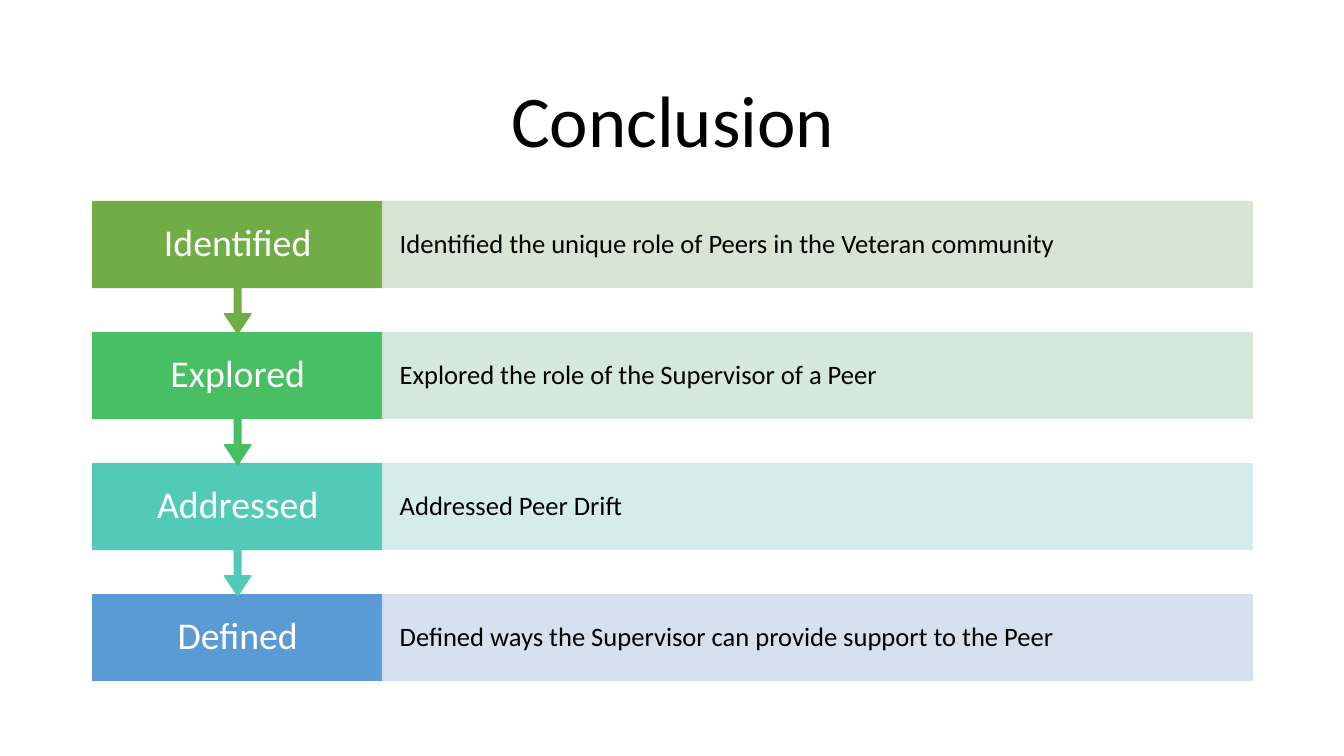
from pptx import Presentation
from pptx.dml.color import RGBColor
from pptx.enum.shapes import MSO_SHAPE
from pptx.enum.text import MSO_ANCHOR, PP_ALIGN
from pptx.oxml.ns import qn
from pptx.util import Inches, Pt

RECTANGLE = MSO_SHAPE.RECTANGLE
ARROW_BOX = MSO_SHAPE.DOWN_ARROW_CALLOUT
CENTER, LEFT = PP_ALIGN.CENTER, PP_ALIGN.LEFT
MIDDLE = MSO_ANCHOR.MIDDLE

SLIDE_WIDTH, SLIDE_HEIGHT = 13.33, 7.5
MARGIN = 0.92
CONTENT_WIDTH = 11.5
TITLE_BOX = (MARGIN, 0.61, CONTENT_WIDTH, 1.24)
STEPS_BOX = (MARGIN, 2, CONTENT_WIDTH, 4.75)
ROW_PITCH = 1.3
ARROW_HEIGHT = 1.31
BOX_SHARE = 0.65
LABEL_SHARE = 0.25
ARROW_ADJUSTMENTS = (0.05, 0.1, 0.15, BOX_SHARE)

TITLE_TEXT = {"size": 52, "color": "000000", "align": CENTER, "inset": 0.1}
LABEL_TEXT = {"size": 27, "color": "FFFFFF", "align": CENTER, "inset": 0.2}
DETAIL_TEXT = {"size": 19, "color": "000000", "align": LEFT, "inset": 0.17}

STEPS = [
    ("Identified", "Identified the unique role of Peers in the Veteran community", "70AD47", "D5E3CF"),
    ("Explored", "Explored the role of the Supervisor of a Peer", "49BF64", "D0E7D8"),
    ("Addressed", "Addressed Peer Drift", "52CAB8", "D0ECEA"),
    ("Defined", "Defined ways the Supervisor can provide support to the Peer", "5B9BD5", "D2DEEF"),
]


def color(hex_value):
    return RGBColor.from_string(hex_value)


def write_text(shape, text, style):
    frame = shape.text_frame
    inset = Inches(style["inset"])
    frame_format = {
        "word_wrap": True, "vertical_anchor": MIDDLE,
        "margin_left": inset, "margin_right": inset,
        "margin_top": 0, "margin_bottom": 0,
    }
    for name, value in frame_format.items():
        setattr(frame, name, value)
    paragraph = frame.paragraphs[0]
    paragraph.alignment = style["align"]
    paragraph.line_spacing = 0.9
    run = paragraph.add_run()
    run.text = text
    run.font.name = "Calibri"
    run.font.size = Pt(style["size"])
    run.font.color.rgb = color(style["color"])


def add_block(slide, kind, box, fill, text, style):
    shape = slide.shapes.add_shape(kind, *map(Inches, box))
    shape.shadow.inherit = False
    shape.fill.solid()
    shape.fill.fore_color.rgb = color(fill)
    shape.line.color.rgb = color(fill)
    shape.line.width = Pt(1)
    write_text(shape, text, style)
    return shape


def set_opacity(shape, percent):
    """Apply one opacity to both the fill and the outline."""
    for element in shape.element.spPr.iter(qn("a:srgbClr")):
        alpha = element.makeelement(qn("a:alpha"), {"val": str(percent * 1000)})
        element.append(alpha)


def add_title(slide, box, text):
    write_text(slide.shapes.add_textbox(*map(Inches, box)), text, TITLE_TEXT)


def add_steps(slide, box, steps):
    """Stack the steps from the bottom up, so each arrow tip overlaps the next box."""
    left, top, width, height = box
    row_height = height - ROW_PITCH * (len(steps) - 1)
    label_width = width * LABEL_SHARE
    for row, (label, detail, strong, pale) in reversed(list(enumerate(steps))):
        row_top = top + row * ROW_PITCH
        is_last = row == len(steps) - 1
        kind = RECTANGLE if is_last else ARROW_BOX
        label_height = row_height if is_last else ARROW_HEIGHT
        label_box = (left, row_top, label_width, label_height)
        label_shape = add_block(slide, kind, label_box, strong, label, LABEL_TEXT)
        if not is_last:
            for index, value in enumerate(ARROW_ADJUSTMENTS):
                label_shape.adjustments[index] = value
        detail_box = (left + label_width, row_top, width - label_width, row_height)
        detail_shape = add_block(slide, RECTANGLE, detail_box, pale, detail, DETAIL_TEXT)
        set_opacity(detail_shape, 90)


def main():
    presentation = Presentation()
    presentation.slide_width = Inches(SLIDE_WIDTH)
    presentation.slide_height = Inches(SLIDE_HEIGHT)
    slide = presentation.slides.add_slide(presentation.slide_layouts[6])
    add_title(slide, TITLE_BOX, "Conclusion")
    add_steps(slide, STEPS_BOX, STEPS)
    presentation.save("out.pptx")


if __name__ == "__main__":
    main()
